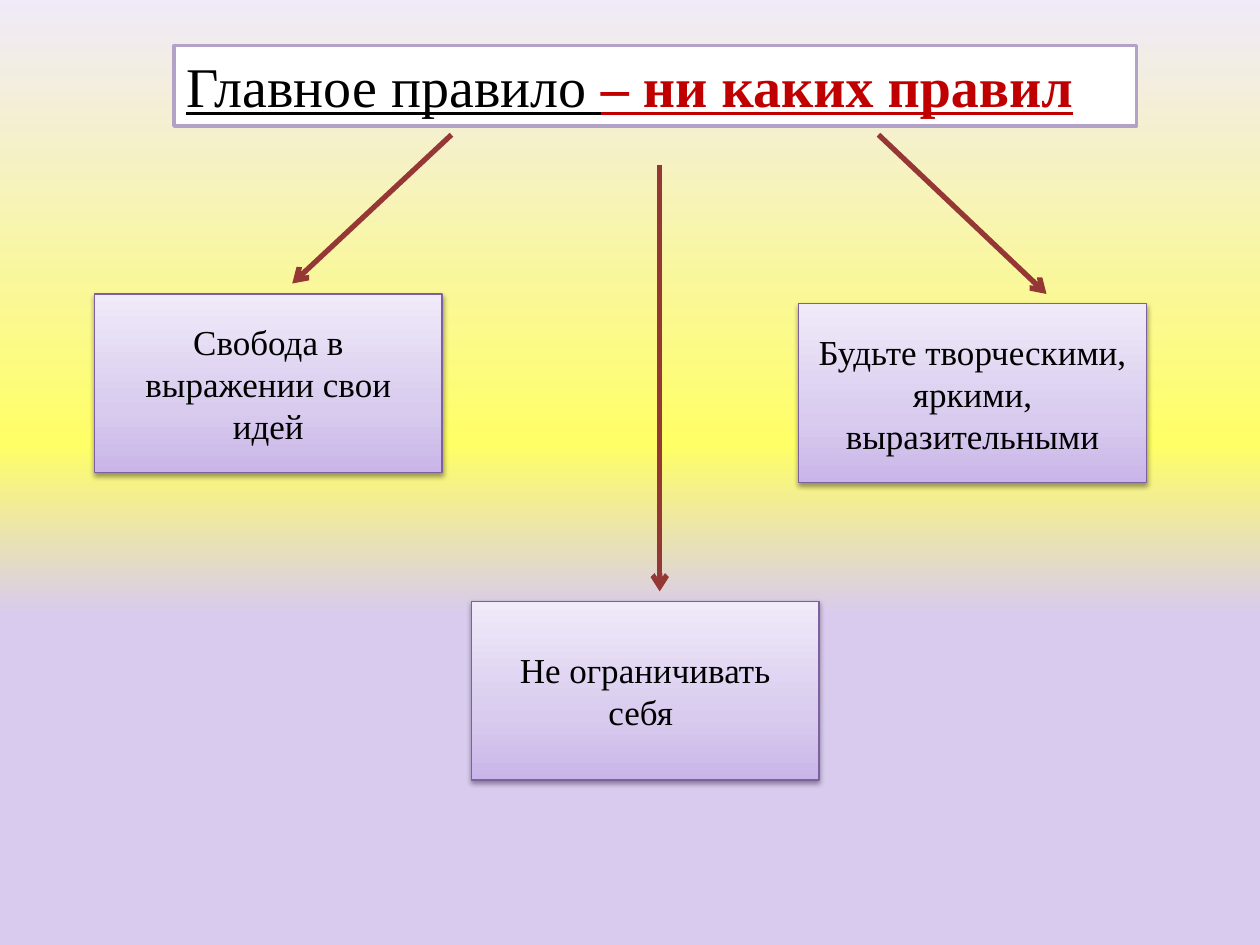
import pptx
import pptx.dml.color
import pptx.enum.shapes
import pptx.enum.text
import pptx.oxml
import pptx.oxml.ns
import pptx.util
from lxml import etree

Pt = pptx.util.Pt
ALIGN = pptx.enum.text.PP_ALIGN
ANCHOR = pptx.enum.text.MSO_ANCHOR

THEME = {
    "font": "Times New Roman",
    "title_size": 32,
    "idea_size": 20,
    "text": "000000",
    "accent": "C00000",
    "title_fill": "FFFFFF",
    "title_line": "B3A2C7",
    "idea_line": "7D60A0",
    "arrow": "953735",
    "shadow": "000000",
    "background": [(35, "D8CBEE"), (53, "FFFF66"), (100, "F0EAF9")],
    "idea_fill": [(0, "C9B5E8"), (35, "D8CBEE"), (100, "F0EAF9")],
}

SLIDE_SIZE = (720, 540)
TITLE_BOX = (99.4, 26, 550, 46)
TITLE = [
    ("Главное правило ", THEME["text"], False),
    ("– ни каких правил", THEME["accent"], True),
]
IDEA_SIZE = (198.7, 102.2)
IDEAS = [
    ("Свобода в выражении свои идей", (54, 168)),
    ("Не ограничивать себя ", (269.3, 343.6)),
    ("Будьте творческими, яркими, выразительными", (456.4, 173.6)),
]
ARROWS = [
    ((258, 77), (167, 162)),
    ((502, 77), (598, 168)),
    ((377, 94.3), (377, 338)),
]


def rgb(color):
    """Turn a hex string into a colour."""
    return pptx.dml.color.RGBColor.from_string(color)


def add_xml(parent, tag, **attributes):
    """Append a drawing element and return it."""
    return etree.SubElement(parent, pptx.oxml.ns.qn("a:" + tag), attributes)


def set_gradient(fill, element, stops):
    """Fill from bottom to top through the given stops."""
    fill.gradient()
    fill.gradient_angle = 90
    stop_list = element.find(".//" + pptx.oxml.ns.qn("a:gsLst"))
    for old_stop in list(stop_list):
        stop_list.remove(old_stop)
    for position, color in stops:
        stop = add_xml(stop_list, "gs", pos=str(position * 1000))
        add_xml(stop, "srgbClr", val=color)


def add_text(paragraph, text, *, size, color=THEME["text"], bold=False, underline=False):
    """Add one formatted run to a paragraph."""
    run = paragraph.add_run()
    run.text = text
    font = run.font
    font.name, font.size, font.bold = THEME["font"], Pt(size), bold
    font.underline = underline
    font.color.rgb = rgb(color)


def add_box(slide, box, *, line, line_width, align, anchor):
    """Add an outlined rectangle and return it with its paragraph."""
    shape = slide.shapes.add_shape(
        pptx.enum.shapes.MSO_SHAPE.RECTANGLE, *map(Pt, box))
    shape.line.color.rgb = rgb(line)
    shape.line.width = Pt(line_width)
    shape.shadow.inherit = False
    frame = shape.text_frame
    frame.word_wrap = True
    frame.vertical_anchor = anchor
    paragraph = frame.paragraphs[0]
    paragraph.alignment = align
    return shape, paragraph


def add_title(slide):
    """Add the two-coloured rule at the top."""
    shape, paragraph = add_box(slide, TITLE_BOX, line=THEME["title_line"], line_width=2,
                               align=ALIGN.LEFT, anchor=ANCHOR.TOP)
    shape.fill.solid()
    shape.fill.fore_color.rgb = rgb(THEME["title_fill"])
    shape.text_frame.auto_size = pptx.enum.text.MSO_AUTO_SIZE.SHAPE_TO_FIT_TEXT
    for text, color, bold in TITLE:
        add_text(paragraph, text, size=THEME["title_size"], color=color,
                 bold=bold, underline=True)


def add_idea(slide, text, position):
    """Add a shaded box holding one idea."""
    shape, paragraph = add_box(slide, position + IDEA_SIZE, line=THEME["idea_line"],
                               line_width=0.75, align=ALIGN.CENTER, anchor=ANCHOR.MIDDLE)
    set_gradient(shape.fill, shape.element, THEME["idea_fill"])
    effects = shape.element.spPr.find(pptx.oxml.ns.qn("a:effectLst"))
    shadow = add_xml(effects, "outerShdw", blurRad=str(Pt(3.1)), dist=str(Pt(1.6)),
                     dir="5400000", rotWithShape="0")
    color = add_xml(shadow, "srgbClr", val=THEME["shadow"])
    add_xml(color, "alpha", val="38000")
    add_text(paragraph, text, size=THEME["idea_size"])


def add_arrow(slide, start, end):
    """Add a straight arrow from the rule to an idea."""
    arrow = slide.shapes.add_connector(
        pptx.enum.shapes.MSO_CONNECTOR.STRAIGHT, *map(Pt, start + end))
    arrow.line.color.rgb = rgb(THEME["arrow"])
    arrow.line.width = Pt(3)
    add_xml(arrow.line._get_or_add_ln(), "tailEnd", type="arrow")
    add_xml(arrow.element.spPr, "effectLst")


def main():
    """Build and save the slide."""
    presentation = pptx.Presentation()
    presentation.slide_width, presentation.slide_height = map(Pt, SLIDE_SIZE)
    slide = presentation.slides.add_slide(presentation.slide_layouts[6])
    set_gradient(slide.background.fill, slide.element, THEME["background"])
    add_title(slide)
    for text, position in IDEAS:
        add_idea(slide, text, position)
    for start, end in ARROWS:
        add_arrow(slide, start, end)
    presentation.save("out.pptx")


if __name__ == "__main__":
    main()
